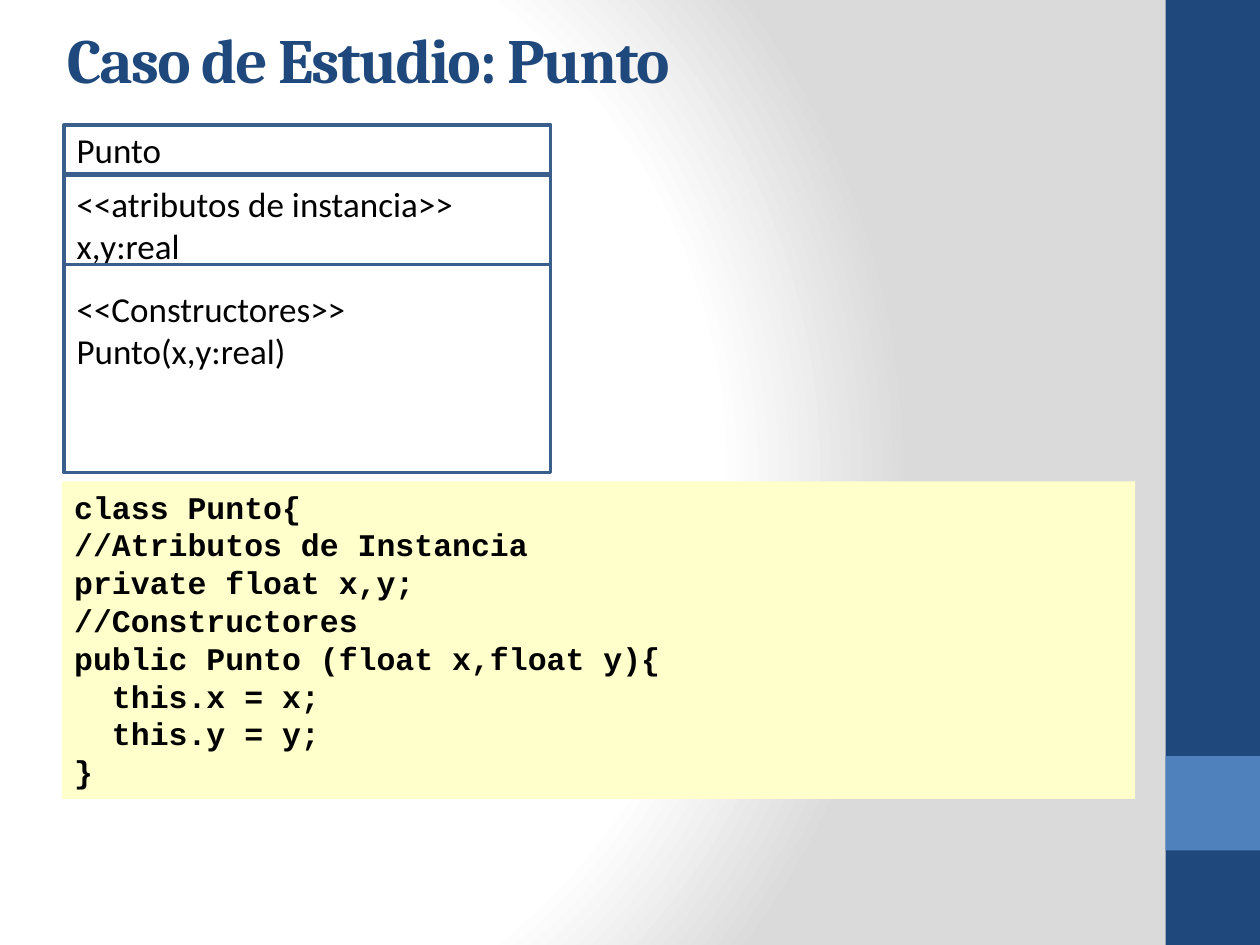
import dataclasses

import pptx
import pptx.dml.color
import pptx.enum.shapes
import pptx.enum.text
import pptx.oxml
import pptx.oxml.ns
import pptx.util

Inches = pptx.util.Inches
Pt = pptx.util.Pt
Anchor = pptx.enum.text.MSO_ANCHOR


@dataclasses.dataclass(frozen=True)
class Theme:
    navy: str = "1F497D"
    blue: str = "4F81BD"
    outline: str = "3A5F8C"
    white: str = "FFFFFF"
    grey: str = "DADADA"
    cream: str = "FFFFCC"
    black: str = "000000"
    title_size: int = 36
    diagram_size: int = 20
    code_size: int = 18


theme = Theme()


def add_box(left, top, width, height, fill, outline=None):
    box = page.shapes.add_shape(
        pptx.enum.shapes.MSO_SHAPE.RECTANGLE,
        Inches(left), Inches(top), Inches(width), Inches(height))
    box.shadow.inherit = False
    box.fill.solid()
    box.fill.fore_color.rgb = pptx.dml.color.RGBColor.from_string(fill)
    if outline:
        box.line.color.rgb = pptx.dml.color.RGBColor.from_string(outline)
        box.line.width = Pt(2)
    else:
        box.line.fill.background()
    return box


def write_lines(box, lines, font, size, color, bold=False, spacing=None):
    frame = box.text_frame
    frame.word_wrap = True
    for index, line in enumerate(lines):
        para = frame.paragraphs[0] if index == 0 else frame.add_paragraph()
        para.alignment = pptx.enum.text.PP_ALIGN.LEFT
        para.line_spacing = spacing
        span = para.add_run()
        span.text = line
        span.font.name = font
        span.font.size = Pt(size)
        span.font.bold = bold
        span.font.color.rgb = pptx.dml.color.RGBColor.from_string(color)


deck = pptx.Presentation()
deck.slide_width = Inches(10)
deck.slide_height = Inches(7.5)
page = deck.slides.add_slide(deck.slide_layouts[0])
subtitle = page.placeholders[1]
subtitle.element.getparent().remove(subtitle.element)

# Radial background
page.background.fill.solid()
solid = page.element.find(".//" + pptx.oxml.ns.qn("a:solidFill"))
stops = "".join(
    f'<a:gs pos="{position}"><a:srgbClr val="{color}"/></a:gs>'
    for position, color in [(0, theme.white), (75000, theme.white), (100000, theme.grey)])
solid.getparent().replace(solid, pptx.oxml.parse_xml(
    f'<a:gradFill {pptx.oxml.ns.nsdecls("a")} rotWithShape="1"><a:gsLst>{stops}</a:gsLst>'
    '<a:path path="circle"><a:fillToRect l="20000" t="50000" r="100000" b="50000"/></a:path>'
    '</a:gradFill>'))

# Side band
add_box(9.25, 0, 0.75, 7.5, theme.navy)
add_box(9.25, 6, 0.75, 0.75, theme.blue)

# Title
title = page.shapes.title
title.left, title.top = Inches(0.43), Inches(0.05)
title.width, title.height = Inches(8.25), Inches(0.76)
title.text_frame.vertical_anchor = Anchor.BOTTOM
write_lines(title, ["Caso de Estudio: Punto"], "Cambria", theme.title_size, theme.navy, bold=True)
title.text_frame.paragraphs[0].runs[0].font._element.set("spc", "-100")

# Class diagram: top, height, anchor, top inset, lines
compartments = [
    (0.99, 0.39, Anchor.MIDDLE, 0.05, ["Punto"]),
    (1.39, 0.79, Anchor.MIDDLE, 0.05, ["<<atributos de instancia>>", "x,y:real"]),
    (2.1, 1.65, Anchor.TOP, 0.18, ["<<Constructores>>", "Punto(x,y:real)"]),
]
for top, height, anchor, inset, lines in compartments:
    compartment = add_box(0.51, top, 3.86, height, theme.white, theme.outline)
    compartment.text_frame.vertical_anchor = anchor
    compartment.text_frame.margin_top = Inches(inset)
    write_lines(compartment, lines, "Calibri", theme.diagram_size, theme.black)

# Source code
code = add_box(0.49, 3.82, 8.52, 2.52, theme.cream)
code.text_frame.vertical_anchor = Anchor.TOP
write_lines(code, [
    "class Punto{",
    "//Atributos de Instancia",
    "private float x,y;",
    "//Constructores",
    "public Punto (float x,float y){",
    "  this.x = x;",
    "  this.y = y;",
    "}",
], "Courier New", theme.code_size, theme.black, bold=True, spacing=Pt(21.6))

deck.save("out.pptx")
